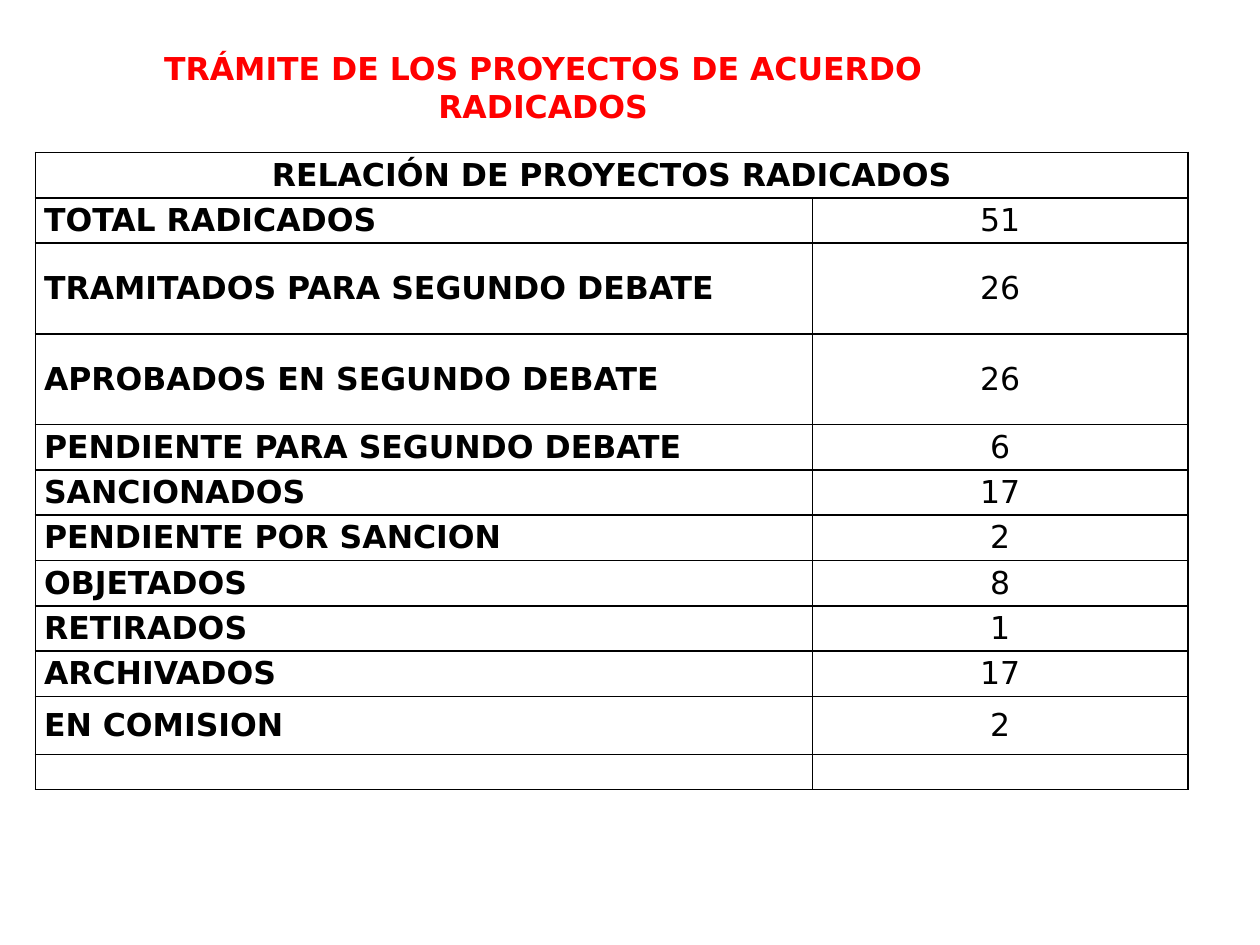
from lxml import etree
from pptx import Presentation
from pptx.dml.color import RGBColor
from pptx.enum.text import MSO_ANCHOR, MSO_AUTO_SIZE, PP_ALIGN
from pptx.oxml.ns import qn
from pptx.util import Inches, Pt

BLACK = RGBColor(0x00, 0x00, 0x00)
RED = RGBColor(0xFF, 0x00, 0x00)
FONT = "DejaVu Sans"

HEADING = "RELACIÓN DE PROYECTOS RADICADOS"
# Label, count, row height in inches
PROJECT_ROWS = [
    ("TOTAL RADICADOS", "51", 0.36),
    ("TRAMITADOS PARA SEGUNDO DEBATE", "26", 0.72),
    ("APROBADOS EN SEGUNDO DEBATE", "26", 0.72),
    ("PENDIENTE PARA SEGUNDO DEBATE", "6", 0.36),
    ("SANCIONADOS", "17", 0.36),
    ("PENDIENTE POR SANCION", "2", 0.36),
    ("OBJETADOS", "8", 0.36),
    ("RETIRADOS", "1", 0.36),
    ("ARCHIVADOS", "17", 0.36),
    ("EN COMISION", "2", 0.46),
    ("", "", 0.28),
]
COLUMN_SHARES = (0.674, 0.326)


def set_attributes(target, values):
    for name, value in values.items():
        setattr(target, name, value)


def write_text(paragraph, text, color, bold, alignment):
    paragraph.alignment = alignment
    run = paragraph.add_run()
    run.text = text
    set_attributes(run.font, {"name": FONT, "size": Pt(18), "bold": bold})
    run.font.color.rgb = color


def add_borders(cell):
    """Draw a 1 pt black line on all four sides; call before filling the cell."""
    properties = cell._tc.get_or_add_tcPr()
    for side in ("lnL", "lnR", "lnT", "lnB"):
        line = etree.SubElement(properties, qn(f"a:{side}"), w=str(Pt(1)))
        fill = etree.SubElement(line, qn("a:solidFill"))
        etree.SubElement(fill, qn("a:srgbClr"), val=str(BLACK))


def format_cell(cell, text, bold, alignment):
    set_attributes(cell, {
        "margin_left": Inches(0.07), "margin_right": Inches(0.07),
        "margin_top": 0, "margin_bottom": 0,
        "vertical_anchor": MSO_ANCHOR.MIDDLE,
    })
    add_borders(cell)
    cell.fill.background()
    paragraph = cell.text_frame.paragraphs[0]
    if text:
        write_text(paragraph, text, BLACK, bold, alignment)
    else:
        # Keeps the empty row from growing
        etree.SubElement(paragraph._p, qn("a:endParaRPr"), sz="1000")


def place_title(slide, left, top, width, height):
    title = slide.shapes.title
    set_attributes(title, {"left": left, "top": top, "width": width, "height": height})
    frame = title.text_frame
    set_attributes(frame, {
        "word_wrap": True, "auto_size": MSO_AUTO_SIZE.NONE,
        "vertical_anchor": MSO_ANCHOR.TOP,
    })
    write_text(frame.paragraphs[0], "TRÁMITE DE LOS PROYECTOS DE ACUERDO RADICADOS",
               RED, True, PP_ALIGN.CENTER)


def add_project_table(slide, left, top, width, height):
    table = slide.shapes.add_table(
        len(PROJECT_ROWS) + 1, len(COLUMN_SHARES), left, top, width, height).table
    set_attributes(table, {"first_row": False, "horz_banding": False})
    for column, share in zip(table.columns, COLUMN_SHARES):
        column.width = int(width * share)

    table.rows[0].height = Inches(0.36)
    heading = table.cell(0, 0)
    heading.merge(table.cell(0, 1))
    format_cell(heading, HEADING, True, PP_ALIGN.CENTER)
    format_cell(table.cell(0, 1), "", False, PP_ALIGN.CENTER)

    for index, (label, count, row_height) in enumerate(PROJECT_ROWS, start=1):
        table.rows[index].height = Inches(row_height)
        format_cell(table.cell(index, 0), label, True, PP_ALIGN.JUSTIFY)
        format_cell(table.cell(index, 1), count, False, PP_ALIGN.CENTER)


def main():
    presentation = Presentation()
    set_attributes(presentation, {"slide_width": Inches(10), "slide_height": Inches(7.5)})
    slide = presentation.slides.add_slide(presentation.slide_layouts[5])
    add_project_table(slide, Inches(0.28), Inches(1.21), Inches(9.15), Inches(5.06))
    place_title(slide, Inches(0.62), Inches(0.34), Inches(7.38), Inches(0.71))
    presentation.save("out.pptx")


if __name__ == "__main__":
    main()
